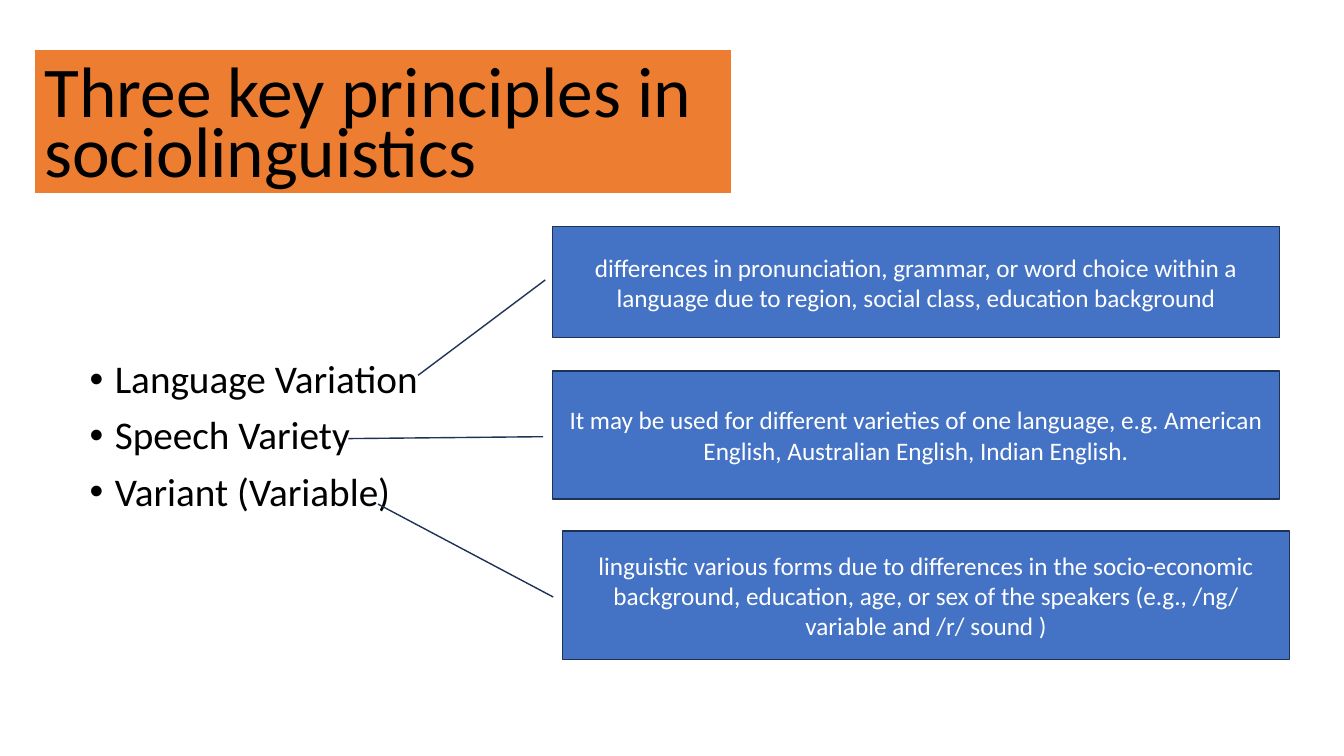
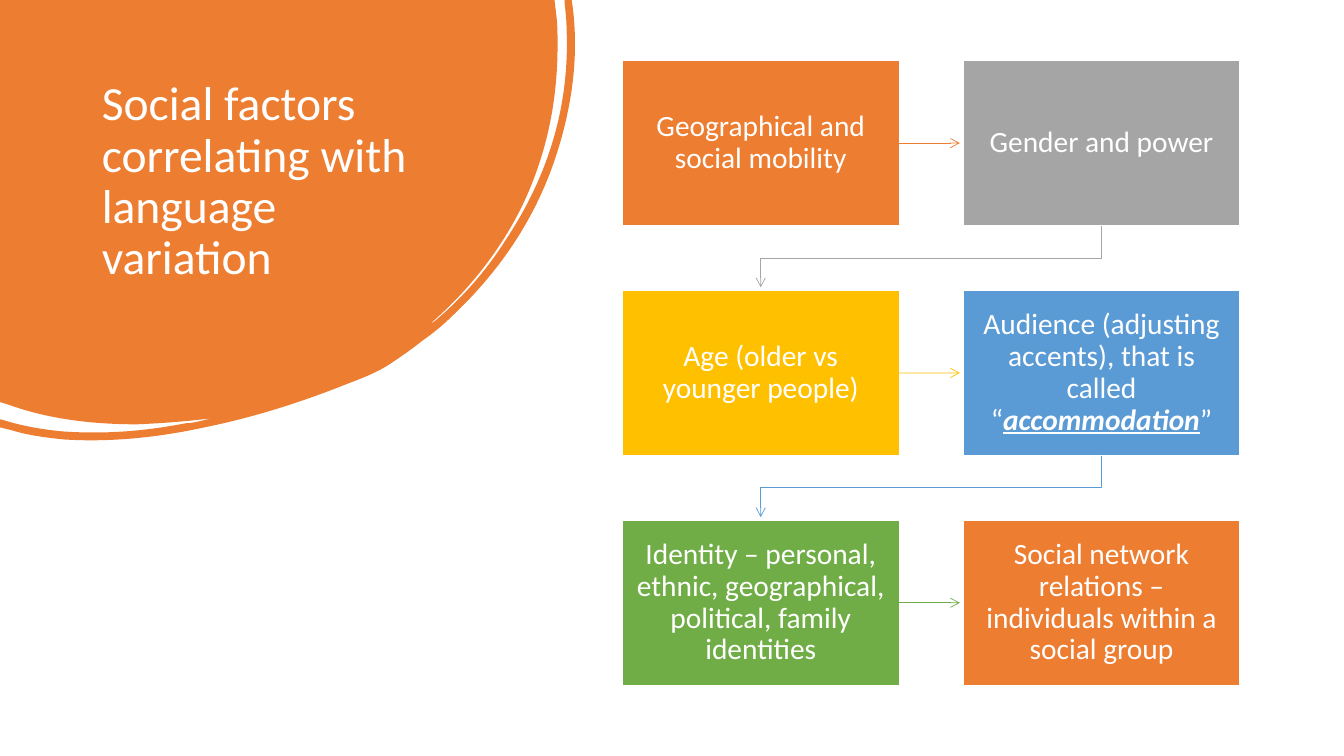
from dataclasses import dataclass
from typing import Any

import pptx
import pptx.dml.color
import pptx.enum.shapes
import pptx.enum.text
import pptx.oxml
import pptx.oxml.ns
import pptx.util

Inches = pptx.util.Inches
Pt = pptx.util.Pt
qn = pptx.oxml.ns.qn
MSO_SHAPE = pptx.enum.shapes.MSO_SHAPE
ANCHOR = pptx.enum.text.MSO_ANCHOR
ALIGN = pptx.enum.text.PP_ALIGN

# Shared look
FONT = "Calibri"
COLORS = {
    "orange": "ED7D31", "gray": "A5A5A5", "gold": "FFC000", "sky": "5B9BD5",
    "green": "70AD47", "blue": "4472C4", "navy": "1E3256",
    "black": "000000", "white": "FFFFFF",
}
EMPHASIS = {"bold": True, "italic": True, "underline": True}
TITLE_ONLY = 5
DRAWING = pptx.oxml.ns.nsdecls("a")


@dataclass(frozen=True)
class Area:
    left: float
    top: float
    width: float
    height: float

    def lengths(self) -> list[int]:
        return [Inches(v) for v in (self.left, self.top, self.width, self.height)]


@dataclass(frozen=True)
class Style:
    size: float
    color: str
    spacing: float = 1.0
    align: Any = ALIGN.LEFT
    anchor: Any = ANCHOR.TOP
    inset_x: float = 0.1
    inset_y: float = 0.05


@dataclass(frozen=True)
class Callout:
    area: Area
    pointer: tuple[float, ...]
    text: str


@dataclass(frozen=True)
class Factor:
    color: str
    text: str
    stressed: str = ""
    ending: str = ""


CALLOUT_STYLE = Style(18, "white", align=ALIGN.CENTER, anchor=ANCHOR.MIDDLE)
FACTOR_STYLE = Style(21, "white", 0.9, ALIGN.CENTER, ANCHOR.MIDDLE, 0.13, 0.14)

# Slide 1 content
PRINCIPLES = ["Language Variation", "Speech Variety", "Variant (Variable)"]
CALLOUTS = [
    Callout(Area(5.48, 2.25, 7.21, 1.1), (0.48, -0.01, 1.34, -0.185),
            "differences in pronunciation, grammar, or word choice within a "
            "language due to region, social class, education background"),
    Callout(Area(5.48, 3.68, 7.21, 1.27), (0.514, -0.013, 0.529, -0.281),
            "It may be used for different varieties of one language, e.g. "
            "American English, Australian English, Indian English."),
    Callout(Area(5.58, 5.27, 7.21, 1.27), (0.514, -0.013, -0.212, -0.254),
            "linguistic various forms due to differences in the socio-economic "
            "background, education, age, or sex of the speakers (e.g., /ng/ "
            "variable and /r/ sound )"),
]

# Slide 2 content, in reading order over two columns
FACTORS = [
    Factor("orange", "Geographical and social mobility"),
    Factor("gray", "Gender and power"),
    Factor("gold", "Age (older vs younger people)"),
    Factor("sky", "Audience (adjusting accents), that is called “",
           "accommodation", "”"),
    Factor("green", "Identity – personal, ethnic, geographical, political, "
                    "family identities"),
    Factor("orange", "Social network relations – individuals within a social group"),
]
GRID = Area(6.17, 0.6, 2.75, 1.64)
COLUMNS, COLUMN_STEP, ROW_STEP = 2, 3.38, 2.28
ARROW_GAP = 0.03

# Corner outline: two numbers draw a line, six draw a cubic curve
CORNER = [
    (0, 0), (5.5, 0), (5.52, 0.17),
    (5.53, 0.26, 5.53, 0.36, 5.53, 0.45), (5.53, 1.01, 5.42, 1.54, 5.18, 2.04),
    (4.96, 2.49, 4.65, 2.88, 4.27, 3.21), (4.29, 3.21, 4.3, 3.19, 4.32, 3.18),
    (4.59, 2.95, 4.82, 2.69, 5.01, 2.39), (5.43, 1.76, 5.65, 1.07, 5.62, 0.3),
    (5.62, 0.21, 5.61, 0.12, 5.6, 0.03), (5.6, 0), (5.67, 0), (5.68, 0.07),
    (5.74, 0.54, 5.68, 1.02, 5.53, 1.5), (5.33, 2.14, 4.97, 2.68, 4.48, 3.14),
    (4.39, 3.23, 4.29, 3.31, 4.19, 3.38), (4.09, 3.46, 3.99, 3.53, 3.87, 3.61),
    (3.75, 3.69, 3.6, 3.75, 3.44, 3.81), (2.99, 3.99, 2.52, 4.14, 2.03, 4.24),
    (1.57, 4.34, 1.1, 4.39, 0.63, 4.36), (0.45, 4.34, 0.28, 4.32, 0.12, 4.27),
    (0, 4.24), (0, 4.16), (0.04, 4.17),
    (0.23, 4.23, 0.42, 4.26, 0.61, 4.28), (1.03, 4.31, 1.43, 4.28, 1.84, 4.2),
    (1.89, 4.2, 1.93, 4.19, 1.98, 4.18), (2.02, 4.17, 2.06, 4.16, 2.1, 4.15),
    (1.86, 4.18, 1.61, 4.2, 1.36, 4.21), (0.92, 4.21, 0.48, 4.16, 0.07, 4.01),
    (0, 3.99),
]


def apply(target: Any, values: dict[str, Any]) -> None:
    for name, value in values.items():
        setattr(target, name, value)


def rgb(color: str) -> pptx.dml.color.RGBColor:
    return pptx.dml.color.RGBColor.from_string(COLORS[color])


def paint(shape: Any, fill: str, line: str = "", width: float = 1) -> None:
    shape.shadow.inherit = False
    shape.fill.solid()
    shape.fill.fore_color.rgb = rgb(fill)
    if line:
        shape.line.color.rgb = rgb(line)
        shape.line.width = Pt(width)
    else:
        shape.line.fill.background()


def add_run(paragraph: Any, text: str, style: Style, **extra: Any) -> None:
    run = paragraph.add_run()
    run.text = text
    apply(run.font, {"name": FONT, "size": Pt(style.size), **extra})
    run.font.color.rgb = rgb(style.color)


def write(shape: Any, text: str, style: Style) -> Any:
    frame = shape.text_frame
    apply(frame, {
        "word_wrap": True, "auto_size": pptx.enum.text.MSO_AUTO_SIZE.NONE,
        "vertical_anchor": style.anchor,
        "margin_left": Inches(style.inset_x), "margin_right": Inches(style.inset_x),
        "margin_top": Inches(style.inset_y), "margin_bottom": Inches(style.inset_y),
    })
    paragraph = frame.paragraphs[0]
    apply(paragraph, {"alignment": style.align, "line_spacing": style.spacing})
    add_run(paragraph, text, style)
    return paragraph


def set_title(slide: Any, text: str, area: Area, style: Style) -> Any:
    title = slide.shapes.title
    apply(title, dict(zip(("left", "top", "width", "height"), area.lengths())))
    write(title, text, style)
    return title


def add_bullets(slide: Any, items: list[str], area: Area, style: Style) -> None:
    frame = slide.shapes.add_textbox(*area.lengths()).text_frame
    frame.word_wrap = True
    for index, item in enumerate(items):
        paragraph = frame.add_paragraph() if index else frame.paragraphs[0]
        apply(paragraph, {"line_spacing": style.spacing, "space_before": Pt(10)})
        add_run(paragraph, item, style)
        properties = paragraph._p.get_or_add_pPr()
        properties.set("marL", str(Inches(0.25)))
        properties.set("indent", str(Inches(-0.25)))
        for tag, key, value in (("a:buFont", "typeface", "Arial"),
                                ("a:buChar", "char", "•")):
            bullet = pptx.oxml.parse_xml(f"<{tag} {DRAWING}/>")
            bullet.set(key, value)
            properties.append(bullet)


def add_callout(slide: Any, callout: Callout) -> None:
    box = slide.shapes.add_shape(MSO_SHAPE.LINE_CALLOUT_1, *callout.area.lengths())
    for index, value in enumerate(callout.pointer):
        box.adjustments[index] = value
    paint(box, "blue", "navy")
    write(box, callout.text, CALLOUT_STYLE)


def add_outline(slide: Any, points: list[tuple[float, ...]], close: bool) -> Any:
    start, *rest = [(Inches(x), Inches(y)) for x, y in points]
    builder = slide.shapes.build_freeform(*start)
    builder.add_line_segments(rest, close=close)
    return builder.convert_to_shape()


def add_corner(slide: Any) -> Any:
    corner = add_outline(slide, [step[-2:] for step in CORNER], close=True)
    paint(corner, "orange")
    # Bend the segments that have control points
    segments = list(corner.element.iter(qn("a:lnTo")))
    for segment, step in zip(segments, CORNER[1:]):
        if len(step) == 6:
            points = "".join(f'<a:pt x="{Inches(x)}" y="{Inches(y)}"/>'
                             for x, y in zip(step[::2], step[1::2]))
            segment.getparent().replace(segment, pptx.oxml.parse_xml(
                f"<a:cubicBezTo {DRAWING}>{points}</a:cubicBezTo>"))
    return corner


def style_arrow(arrow: Any, color: str) -> None:
    arrow.line.color.rgb = rgb(color)
    arrow.line.width = Pt(0.5)
    properties = arrow.element.find(qn("p:spPr"))
    properties.find(qn("a:ln")).append(
        pptx.oxml.parse_xml(f'<a:tailEnd {DRAWING} type="arrow"/>'))
    if properties.find(qn("a:effectLst")) is None:
        properties.append(pptx.oxml.parse_xml(f"<a:effectLst {DRAWING}/>"))


def add_factor(slide: Any, factor: Factor, area: Area) -> Any:
    box = slide.shapes.add_shape(MSO_SHAPE.RECTANGLE, *area.lengths())
    paint(box, factor.color, "white")
    paragraph = write(box, factor.text, FACTOR_STYLE)
    if factor.stressed:
        add_run(paragraph, factor.stressed, FACTOR_STYLE, **EMPHASIS)
        add_run(paragraph, factor.ending, FACTOR_STYLE)
    return box


def add_row_arrow(slide: Any, box: Any, start: Area, end: Area, color: str) -> None:
    middle = Inches(start.top + start.height / 2)
    arrow = slide.shapes.add_connector(
        pptx.enum.shapes.MSO_CONNECTOR.STRAIGHT, Inches(start.left + start.width),
        middle, Inches(end.left - ARROW_GAP), middle)
    arrow.begin_connect(box, 3)
    style_arrow(arrow, color)


def add_return_arrow(slide: Any, start: Area, end: Area, color: str) -> None:
    start_x, end_x = (a.left + a.width / 2 for a in (start, end))
    bottom = start.top + start.height
    bend = (bottom + end.top) / 2
    arrow = add_outline(slide, [(start_x, bottom), (start_x, bend), (end_x, bend),
                                (end_x, end.top - ARROW_GAP)], close=False)
    arrow.fill.background()
    arrow.shadow.inherit = False
    style_arrow(arrow, color)


def build_principles(slide: Any) -> None:
    title = set_title(slide, "Three key principles in sociolinguistics",
                      Area(0.34, 0.49, 6.92, 1.44),
                      Style(51, "black", 0.7, anchor=ANCHOR.BOTTOM))
    paint(title, "orange", "white", 1.5)
    add_bullets(slide, PRINCIPLES, Area(0.79, 3.52, 4.11, 1.9), Style(28, "black", 0.9))
    for callout in CALLOUTS:
        add_callout(slide, callout)


def build_factors(slide: Any) -> None:
    # Corner shape sits behind the title
    corner = add_corner(slide)
    title = set_title(slide, "Social factors correlating with language variation",
                      Area(0.91, 0.74, 3.52, 2.22), Style(34, "white", 0.9))
    title.element.addprevious(corner.element)

    # Boxes on a grid, then the arrows from each to the next
    areas = [Area(GRID.left + i % COLUMNS * COLUMN_STEP,
                  GRID.top + i // COLUMNS * ROW_STEP, GRID.width, GRID.height)
             for i in range(len(FACTORS))]
    boxes = [add_factor(slide, f, a) for f, a in zip(FACTORS, areas)]
    for i, factor in enumerate(FACTORS[:-1]):
        if i % COLUMNS < COLUMNS - 1:
            add_row_arrow(slide, boxes[i], areas[i], areas[i + 1], factor.color)
        else:
            add_return_arrow(slide, areas[i], areas[i + 1], factor.color)


def main() -> None:
    deck = pptx.Presentation()
    apply(deck, {"slide_width": Inches(13.33), "slide_height": Inches(7.5)})
    for build in (build_principles, build_factors):
        build(deck.slides.add_slide(deck.slide_layouts[TITLE_ONLY]))
    deck.save("out.pptx")


if __name__ == "__main__":
    main()
